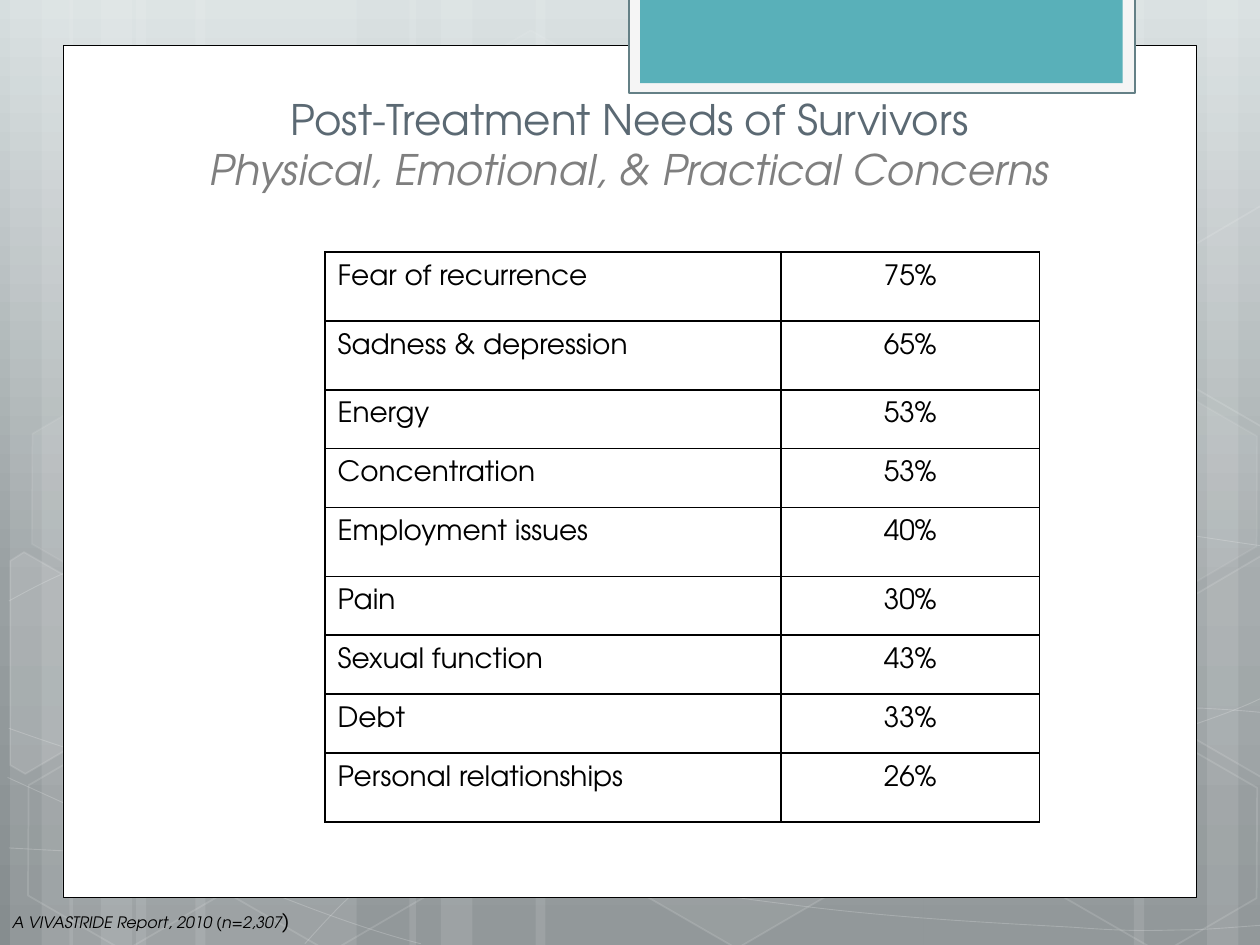
from math import cos, radians, sin
from lxml.etree import SubElement as Sub
from pptx import Presentation
from pptx.dml.color import RGBColor as RGB
from pptx.enum.shapes import MSO_SHAPE as Kind
from pptx.enum.text import MSO_ANCHOR as Anchor, PP_ALIGN as Align
from pptx.oxml.ns import qn
from pptx.util import Inches as In, Pt

WHITE, BLACK = RGB(255, 255, 255), RGB(0, 0, 0)
SLATE, GRAY = RGB(0x5B, 0x69, 0x73), RGB(0x7F, 0x7F, 0x7F)
TEAL, PALE, EDGE = RGB(0x59, 0xB0, 0xB9), RGB(0xF5, 0xF5, 0xF5), RGB(0x64, 0x80, 0x86)
SKY = [(0, RGB(0xD6, 0xDE, 0xDF)), (62, RGB(0x99, 0xA0, 0xA2)), (100, RGB(0x86, 0x8D, 0x8F))]
FONT = "TeX Gyre Adventor"
WIDE, HIGH, TILT = 10, 7.5, 30

TITLE = [("Post-Treatment Needs of Survivors", SLATE, False),
         ("Physical, Emotional, & Practical Concerns", GRAY, True)]
SOURCE = [("A VIVASTRIDE Report, 2010 (n=2,307", 9), (")", 12)]
NEEDS = [("Fear of recurrence", "75%"), ("Sadness & depression", "65%"),
         ("Energy", "53%"), ("Concentration", "53%"), ("Employment issues", "40%"),
         ("Pain", "30%"), ("Sexual function", "43%"), ("Debt", "33%"),
         ("Personal relationships", "26%")]
COLS, TALL, SHORT = (3.62, 2.05), Pt(39.4), Pt(33.5)
TALLS = {0, 1, 4, 8}

BANDS = {1.75: (1.08, 1.55, 7.33), 0.5: (0.08, 0.55, 3.25, 9.58),
         0.83: (0.33, 0.8, 3.5, 9), 3.08: (4.25,)}
HEXES = [(3.34, 0.36, 4, 8), (4.97, 5.89, 6, 12), (0.11, 5.91, 0, 12),
         (0.14, 3.12, 7, 8), (1.74, 5.92, 0, 12), (7.53, 4.53, 10, 12),
         (8.34, 5.93, 0, 12), (8.34, 3.14, 7, 8)]
PARTS = [
    (10, (0.36, 5.35), [(0.08, 4.45), (0.19, 4.38), (0.96, 4.82), (0.95, 5.7),
                        (0.2, 6.14), (0.08, 6.07)]),
    (4, (9.85, 5.2), [(9.26, 4.85), (10.01, 4.41), (10.09, 4.46), (10.09, 6.13),
                      (10.02, 6.17), (9.26, 5.73)]),
    (0, (9.85, 2.41), [(9.26, 2.07), (10.01, 1.63), (10.1, 1.68), (10.09, 3.35),
                       (10.02, 3.39), (9.26, 2.95)]),
]
WAVES = [
    [(0.07, 6.73), (0.61, 6.76), (1.15, 6.79), (1.9, 6.78), (2.65, 6.77), (3.58, 6.75),
     (4.58, 6.65), (5.58, 6.55), (7, 6.36), (7.92, 6.17), (8.83, 5.98), (9.77, 5.68),
     (10.07, 5.51)],
    [(0.07, 4.77), (0.36, 4.61), (0.65, 4.46), (1.21, 4.31), (1.78, 4.16), (2.59, 3.94),
     (3.47, 3.87), (4.36, 3.8), (5.44, 3.79), (6.54, 3.87), (7.64, 3.95), (9.47, 4.26),
     (10.07, 4.34)],
    [(0.06, 6.17), (1.27, 6.72), (2.47, 7.27), (3.34, 7.49)],
    [(0.07, 5.78), (0.38, 5.89), (0.7, 6), (1.28, 6.16), (1.86, 6.31), (2.73, 6.56),
     (3.57, 6.73), (4.4, 6.9), (5.45, 7.08), (6.28, 7.18), (7.11, 7.29), (8, 7.33),
     (8.53, 7.36), (9.05, 7.4), (9.19, 7.38), (9.45, 7.38), (9.71, 7.37), (9.89, 7.35),
     (10.07, 7.34)],
    [(2.42, 7.49), (2.6, 7.29), (2.78, 7.09), (3.02, 6.91), (3.26, 6.73), (3.6, 6.53),
     (3.88, 6.39), (4.16, 6.25), (4.33, 6.19), (4.7, 6.09), (5.06, 5.99), (5.73, 5.85),
     (6.08, 5.78), (6.44, 5.71), (6.49, 5.71), (6.8, 5.69), (7.11, 5.66), (7.6, 5.63),
     (7.94, 5.62), (8.29, 5.61), (8.86, 5.62), (8.86, 5.62), (9.08, 5.62), (9.31, 5.62),
     (9.53, 5.62), (9.71, 5.63), (9.88, 5.64), (10.06, 5.66)],
]


def put(thing, **values):
    for name, value in values.items():
        setattr(thing, name, value)


def tint(fill, node, color, alpha):
    if not alpha:
        fill.background()
        return
    fill.solid()
    fill.fore_color.rgb = color
    if alpha < 100:
        rgb = node.find(qn("a:solidFill")).find(qn("a:srgbClr"))
        Sub(rgb, qn("a:alpha"), val=str(alpha * 1000))


def paint(shape, color=WHITE, alpha=100, line=WHITE, width=1, clear=0):
    shape.shadow.inherit = False
    props = shape.element.spPr
    tint(shape.fill, props, color, alpha)
    shape.line.width = Pt(width)
    tint(shape.line.fill, props.find(qn("a:ln")), line, clear)


def block(slide, kind, x, y, w, h, **look):
    shape = slide.shapes.add_shape(kind, In(x), In(y), In(w), In(h))
    paint(shape, **look)
    return shape


def trace(slide, dots, close, **look):
    dots = [(In(x), In(y)) for x, y in dots]
    pen = slide.shapes.build_freeform(*dots[0])
    pen.add_line_segments(dots[1:], close=close)
    shape = pen.convert_to_shape()
    paint(shape, **look)
    return shape


def bend(shape):
    lines = list(shape.element.iter(qn("a:lnTo")))
    for k in range(0, len(lines), 3):
        trio = lines[k:k + 3]
        arc = Sub(trio[0].getparent(), qn("a:cubicBezTo"))
        for line in trio:
            arc.append(line[0])
            line.getparent().remove(line)


def turn(dots, mid):
    c, s = cos(radians(TILT)), sin(radians(TILT))
    gaps = [(x - mid[0], y - mid[1]) for x, y in dots]
    return [(mid[0] + x * c + y * s, mid[1] - x * s + y * c) for x, y in gaps]


def write(para, text, size, color=BLACK, italic=False):
    run = para.add_run()
    run.text = text
    put(run.font, name=FONT, size=Pt(size), italic=italic, bold=False)
    run.font.color.rgb = color


def margins(thing, gap):
    put(thing, **{f"margin_{side}": In(gap) for side in ("left", "right", "top", "bottom")})


def backdrop(slide):
    fill = slide.background.fill
    fill.gradient()
    fill.gradient_angle = 270
    stops = slide.element.find(".//" + qn("a:gsLst"))
    for stop in list(stops):
        stops.remove(stop)
    for pos, color in SKY:
        stop = Sub(stops, qn("a:gs"), pos=str(pos * 1000))
        Sub(stop, qn("a:srgbClr"), val=str(color))
    for wide, lefts in BANDS.items():
        for x in lefts:
            block(slide, Kind.RECTANGLE, x, 0, wide, HIGH, alpha=10)
    for knots in WAVES:
        bend(trace(slide, knots, False, alpha=0, width=0.5, clear=20))
    for x, y, alpha, clear in HEXES:
        cell = block(slide, Kind.HEXAGON, x, y, 1.75, 1.52, alpha=alpha, clear=clear)
        cell.adjustments[0] = 0.285
        cell.rotation = TILT
    for alpha, mid, dots in PARTS:
        trace(slide, turn(dots, mid), True, alpha=alpha, clear=12).rotation = TILT
    block(slide, Kind.RECTANGLE, 0.5, 0.36, 9, 6.76, line=BLACK, width=0.5, clear=100)
    block(slide, Kind.RECTANGLE, 4.99, -0.02, 4.02, 0.76, color=PALE, line=EDGE,
          width=1.25, clear=100)
    block(slide, Kind.RECTANGLE, 5.08, -0.02, 3.83, 0.68, color=TEAL)


def heading(slide):
    title = slide.shapes.title
    put(title, left=In(0.58), top=In(0.68), width=In(8.83), height=In(1.45))
    frame = title.text_frame
    margins(frame, 0.05)
    put(frame, vertical_anchor=Anchor.MIDDLE, margin_bottom=In(0.58), word_wrap=True)
    para = frame.paragraphs[0]
    para.alignment = Align.CENTER
    for row, (text, color, italic) in enumerate(TITLE):
        if row:
            para.add_line_break()
        write(para, text, 24, color, italic)
    slide.shapes._spTree.append(title.element)


def credit(slide):
    frame = slide.shapes.add_textbox(0, In(7.1), In(3.3), In(0.4)).text_frame
    frame.word_wrap = True
    margins(frame, 0.1)
    para = frame.paragraphs[0]
    para.space_before = Pt(6.4)
    for text, size in SOURCE:
        write(para, text, size, italic=True)


def grid(slide):
    tall = [TALL if row in TALLS else SHORT for row in range(len(NEEDS))]
    table = slide.shapes.add_table(len(NEEDS), len(COLS), In(2.58), In(2),
                                   In(sum(COLS)), sum(tall)).table
    put(table, first_row=False, horz_banding=False)
    for col, wide in zip(table.columns, COLS):
        col.width = In(wide)
    for row, high, need in zip(table.rows, tall, NEEDS):
        row.height = high
        for cell, text, align in zip(row.cells, need, (Align.LEFT, Align.CENTER)):
            margins(cell, 0.1)
            props = cell._tc.get_or_add_tcPr()
            for side in "LRTB":
                line = Sub(props, qn("a:ln" + side), w=str(Pt(1)))
                Sub(Sub(line, qn("a:solidFill")), qn("a:srgbClr"), val=str(BLACK))
            cell.fill.background()
            para = cell.text_frame.paragraphs[0]
            para.alignment = align
            write(para, text, 16)


def main():
    deck = Presentation()
    put(deck, slide_width=In(WIDE), slide_height=In(HIGH))
    slide = deck.slides.add_slide(deck.slide_layouts[5])
    for build in (backdrop, heading, credit, grid):
        build(slide)
    deck.save("out.pptx")


if __name__ == "__main__":
    main()
